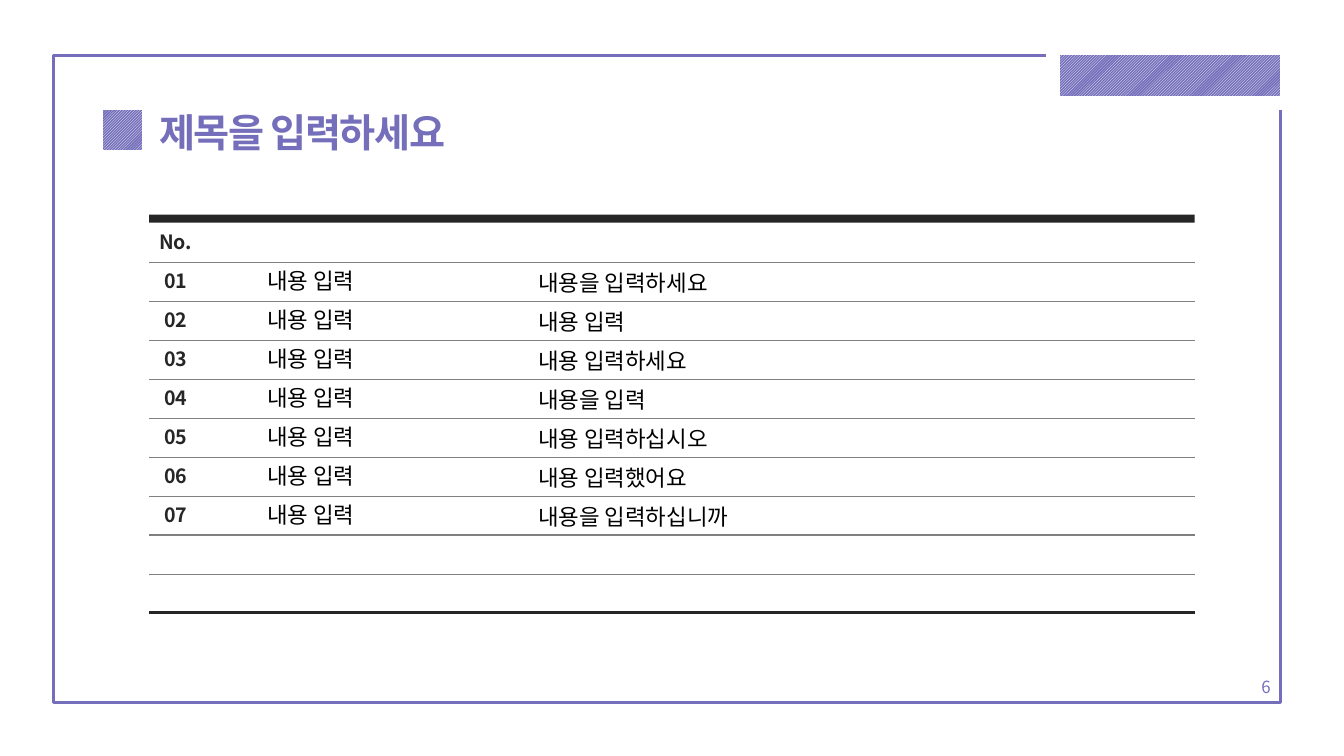
from lxml import etree
from pptx import Presentation
from pptx.dml.color import RGBColor
from pptx.enum import dml, shapes, text
from pptx.oxml import ns
from pptx.util import Inches, Pt

COLORS = {"accent": "756FBB", "ink": "262626", "rule": "808080",
          "body": "000000", "paper": "FFFFFF"}
FONT = "Noto Sans CJK KR"
ENTRIES = [
    ("내용 입력", "내용을 입력하세요"),
    ("내용 입력", "내용 입력"),
    ("내용 입력", "내용 입력하세요"),
    ("내용 입력", "내용을 입력"),
    ("내용 입력", "내용 입력하십시오"),
    ("내용 입력", "내용 입력했어요"),
    ("내용 입력", "내용을 입력하십니까"),
]


def rgb(color):
    return RGBColor.from_string(COLORS[color])


def add_rect(slide, left, top, width, height):
    rect = slide.shapes.add_shape(shapes.MSO_SHAPE.RECTANGLE, Inches(left),
                                  Inches(top), Inches(width), Inches(height))
    rect.shadow.inherit = False
    return rect


def add_hatched_block(slide, left, top, width, height):
    """Diagonal hatching with a thick white edge that cuts into the frame."""
    block = add_rect(slide, left, top, width, height)
    block.fill.patterned()
    block.fill.pattern = dml.MSO_PATTERN.DARK_UPWARD_DIAGONAL
    block.fill.fore_color.rgb = rgb("paper")
    block.fill.back_color.rgb = rgb("accent")
    block.line.color.rgb = rgb("paper")
    block.line.width = Pt(10)


def add_rule(slide, left, top, width, color, weight):
    rule = slide.shapes.add_connector(
        shapes.MSO_CONNECTOR.STRAIGHT, Inches(left), Inches(top),
        Inches(left + width), Inches(top))
    rule.line.color.rgb = rgb(color)
    rule.line.width = Pt(weight)
    etree.SubElement(rule._element.spPr, ns.qn("a:effectLst"))


def add_label(slide, left, top, width, height, wording, size, color,
              bold=False, wrap=True, spacing=None):
    """Add one line of text; spacing is in hundredths of a point."""
    label = slide.shapes.add_textbox(Inches(left), Inches(top),
                                     Inches(width), Inches(height))
    frame = label.text_frame
    frame.text = wording
    frame.word_wrap = wrap
    run = frame.paragraphs[0].runs[0]
    run.font.name = FONT
    run.font.size = Pt(size)
    run.font.bold = bold
    run.font.color.rgb = rgb(color)
    properties = run.font._element
    etree.SubElement(properties, ns.qn("a:ea"), typeface=FONT)
    if spacing is not None:
        properties.set("spc", str(spacing))
    return frame


def add_frame(slide, left, top, width, height):
    border = add_rect(slide, left, top, width, height)
    border.fill.background()
    border.line.color.rgb = rgb("accent")
    border.line.width = Pt(2.5)
    add_hatched_block(slide, left + width - 2.26, top - 0.07, 2.32, 0.54)


def add_heading(slide, left, top, width, height):
    marker_width = 0.53
    add_label(slide, left + marker_width, top + 0.01, width - marker_width,
              height, "제목을 입력하세요", 28, "accent", bold=True, wrap=False,
              spacing=-100)
    add_hatched_block(slide, left, top, marker_width, 0.54)


def add_listing(slide, left, top, width, height):
    """Ruled list: heavy bar, header row, entries and two empty rows."""
    row_count = len(ENTRIES) + 3
    header_height = 0.47
    pitch = (height - header_height) / (row_count - 1)
    first_rule = top + header_height

    bar = add_rect(slide, left, top, width, 0.08)
    bar.fill.solid()
    bar.fill.fore_color.rgb = rgb("ink")
    bar.line.fill.background()

    rule_styles = {len(ENTRIES): ("rule", 1.5), row_count - 1: ("ink", 2)}
    for index in range(row_count):
        color, weight = rule_styles.get(index, ("rule", 0.5))
        add_rule(slide, left, first_rule + index * pitch, width, color, weight)

    add_label(slide, left, top + 0.1, 0.53, 0.34, "No.", 14, "ink",
              bold=True, wrap=False)
    for index, (topic, detail) in enumerate(ENTRIES):
        row_top = first_rule + index * pitch
        add_label(slide, left + 0.05, row_top + 0.02, 0.43, 0.34,
                  f"{index + 1:02d}", 14, "ink", bold=True, wrap=False)
        add_label(slide, left + 1.07, row_top, 2.08, 0.37, topic, 16, "body")
        add_label(slide, left + 3.76, row_top + 0.02, 6.2, 0.37, detail, 16,
                  "body")


def add_page_number(slide, left, top, width, height):
    number = add_label(slide, left, top, width, height, "6", 12, "accent")
    number.vertical_anchor = text.MSO_ANCHOR.MIDDLE
    number.paragraphs[0].alignment = text.PP_ALIGN.RIGHT


def main():
    deck = Presentation()
    deck.slide_width = Inches(13.33)
    deck.slide_height = Inches(7.5)
    slide = deck.slides.add_slide(deck.slide_layouts[6])
    add_frame(slide, 0.53, 0.55, 12.17, 6.42)
    add_heading(slide, 0.95, 1.02, 3.68, 0.57)
    add_listing(slide, 1.48, 2.13, 10.37, 3.95)
    add_page_number(slide, 12.22, 6.61, 0.48, 0.4)
    deck.save("out.pptx")


if __name__ == "__main__":
    main()
